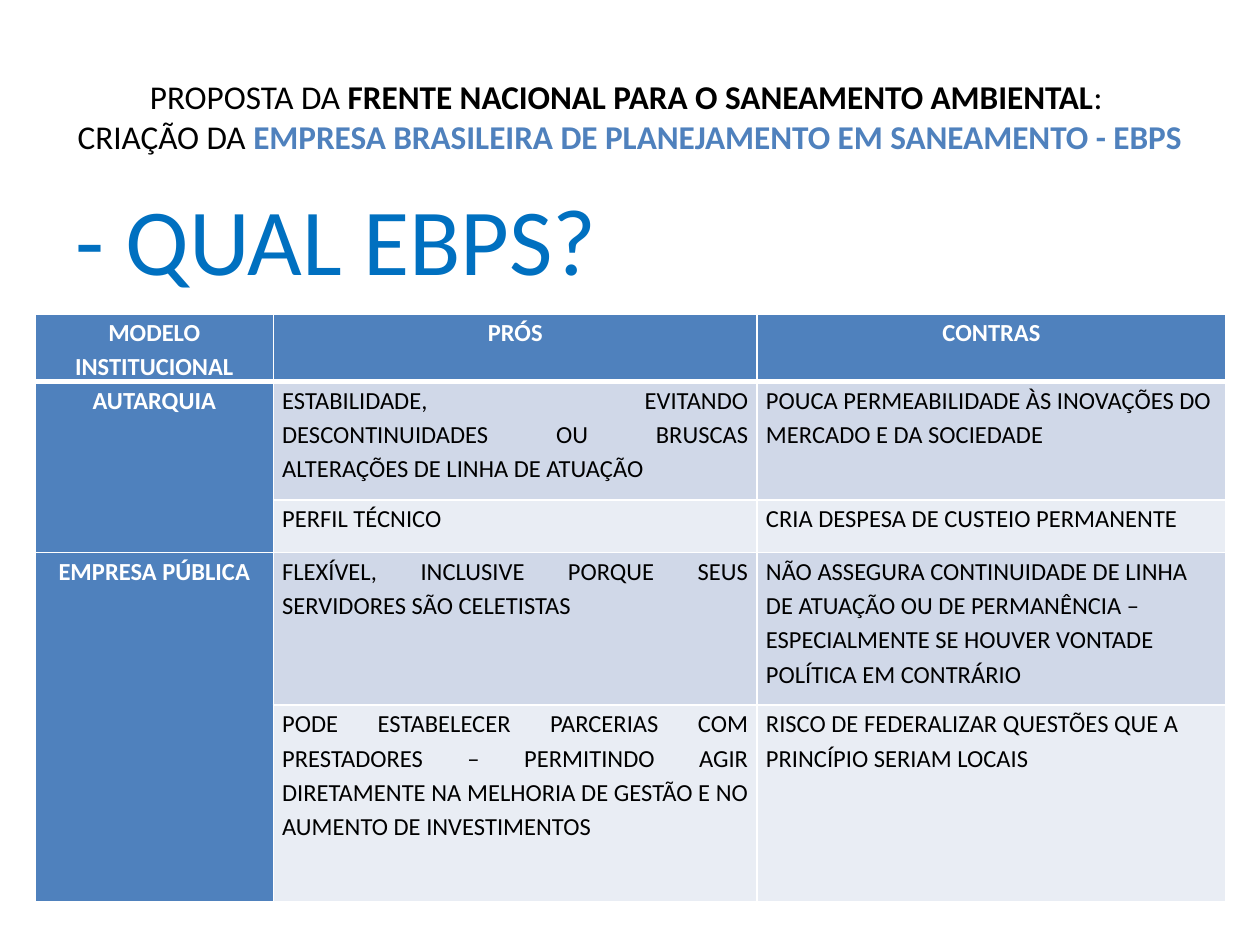
from lxml.etree import SubElement
from pptx import Presentation
from pptx.dml.color import RGBColor
from pptx.enum.text import MSO_ANCHOR as Anchor, PP_ALIGN as Align
from pptx.oxml.ns import qn
from pptx.util import Inches, Pt

BLACK = RGBColor(0x00, 0x00, 0x00)
WHITE = RGBColor(0xFF, 0xFF, 0xFF)
ACCENT = RGBColor(0x4F, 0x81, 0xBD)
BLUE = RGBColor(0x00, 0x70, 0xC0)
BAND_DARK = RGBColor(0xD0, 0xD8, 0xE8)
BAND_LIGHT = RGBColor(0xE9, 0xED, 0xF4)

COL_WIDTHS = (1.89, 3.84, 3.72)
ROW_HEIGHTS = (0.53, 0.94, 0.42, 1.21, 1.56)
ROWS = (
    ("MODELO INSTITUCIONAL", "PRÓS", "CONTRAS"),
    ("AUTARQUIA",
     "ESTABILIDADE, EVITANDO DESCONTINUIDADES OU BRUSCAS ALTERAÇÕES DE LINHA DE ATUAÇÃO",
     "POUCA PERMEABILIDADE ÀS INOVAÇÕES DO MERCADO E DA SOCIEDADE"),
    ("", "PERFIL TÉCNICO", "CRIA DESPESA DE CUSTEIO PERMANENTE"),
    ("EMPRESA PÚBLICA",
     "FLEXÍVEL, INCLUSIVE PORQUE SEUS SERVIDORES SÃO CELETISTAS",
     "NÃO ASSEGURA CONTINUIDADE DE LINHA DE ATUAÇÃO OU DE PERMANÊNCIA – "
     "ESPECIALMENTE SE HOUVER VONTADE POLÍTICA EM CONTRÁRIO"),
    ("",
     "PODE ESTABELECER PARCERIAS COM PRESTADORES – PERMITINDO AGIR DIRETAMENTE "
     "NA MELHORIA DE GESTÃO E NO AUMENTO DE INVESTIMENTOS",
     "RISCO DE FEDERALIZAR QUESTÕES QUE A PRINCÍPIO SERIAM LOCAIS"),
)


def add_text(p, text, *, size, color=BLACK, bold=False):
    """Append a formatted run to a paragraph."""
    r = p.add_run()
    r.text = text
    r.font.name = "Calibri"
    r.font.size = Pt(size)
    r.font.bold = bold
    r.font.color.rgb = color


def add_box(slide, left, top, width, height, *, anchor=Anchor.TOP, align=Align.LEFT):
    """Add a wrapping text box and return its first paragraph."""
    sp = slide.shapes.add_textbox(Inches(left), Inches(top), Inches(width), Inches(height))
    tf = sp.text_frame
    tf.word_wrap = True
    tf.vertical_anchor = anchor
    p = tf.paragraphs[0]
    p.alignment = align
    return p


def set_borders(cell, bottom):
    """Draw white borders, with the given bottom width in points."""
    tc_pr = cell._tc.get_or_add_tcPr()
    for i, (side, width) in enumerate((("L", 1), ("R", 1), ("T", 1), ("B", bottom))):
        ln = SubElement(tc_pr, qn(f"a:ln{side}"), w=str(Pt(width)))
        fill = SubElement(ln, qn("a:solidFill"))
        SubElement(fill, qn("a:srgbClr"), val=str(WHITE))
        tc_pr.insert(i, ln)


def format_cell(cell, text, *, fill, color, bold, align, bottom):
    """Fill one table cell with its text, colour and borders."""
    cell.margin_left = cell.margin_right = Inches(0.07)
    cell.margin_top = cell.margin_bottom = 0
    cell.fill.solid()
    cell.fill.fore_color.rgb = fill
    set_borders(cell, bottom)
    p = cell.text_frame.paragraphs[0]
    p.alignment = align
    p.line_spacing = 1.15
    if text:
        add_text(p, text, size=14, color=color, bold=bold)


def add_models_table(slide):
    """Add the table comparing the institutional models."""
    frame = slide.shapes.add_table(
        len(ROWS), len(COL_WIDTHS), Inches(0.28), Inches(2.49),
        Inches(sum(COL_WIDTHS)), Inches(sum(ROW_HEIGHTS)))
    table = frame.table
    for col, width in zip(table.columns, COL_WIDTHS):
        col.width = Inches(width)
    for row, height in zip(table.rows, ROW_HEIGHTS):
        row.height = Inches(height)
    for i, texts in enumerate(ROWS):
        for j, text in enumerate(texts):
            heading = i == 0 or j == 0
            band = BAND_DARK if i % 2 else BAND_LIGHT
            body_align = Align.JUSTIFY if j == 1 else Align.LEFT
            format_cell(
                table.cell(i, j), text,
                fill=ACCENT if heading else band,
                color=WHITE if heading else BLACK,
                bold=heading,
                align=Align.CENTER if heading else body_align,
                bottom=3 if i == 0 else 1)
    for i in (1, 3):
        table.cell(i, 0).merge(table.cell(i + 1, 0))


def main():
    """Build the slide and save it."""
    prs = Presentation()
    prs.slide_width, prs.slide_height = Inches(10), Inches(7.5)
    slide = prs.slides.add_slide(prs.slide_layouts[6])

    p = add_box(slide, 0.5, 0.3, 9, 1.25, anchor=Anchor.MIDDLE, align=Align.CENTER)
    add_text(p, "PROPOSTA DA ", size=19)
    add_text(p, "FRENTE NACIONAL PARA O SANEAMENTO AMBIENTAL", size=19, bold=True)
    add_text(p, ": ", size=19)
    p.add_line_break()
    add_text(p, "CRIAÇÃO DA ", size=19)
    add_text(p, "EMPRESA BRASILEIRA DE PLANEJAMENTO EM SANEAMENTO - EBPS",
             size=19, color=ACCENT, bold=True)

    p = add_box(slide, 0.5, 1.39, 9, 5.31)
    add_text(p, "- QUAL EBPS?", size=54, color=BLUE)

    add_models_table(slide)
    prs.save("out.pptx")


if __name__ == "__main__":
    main()
